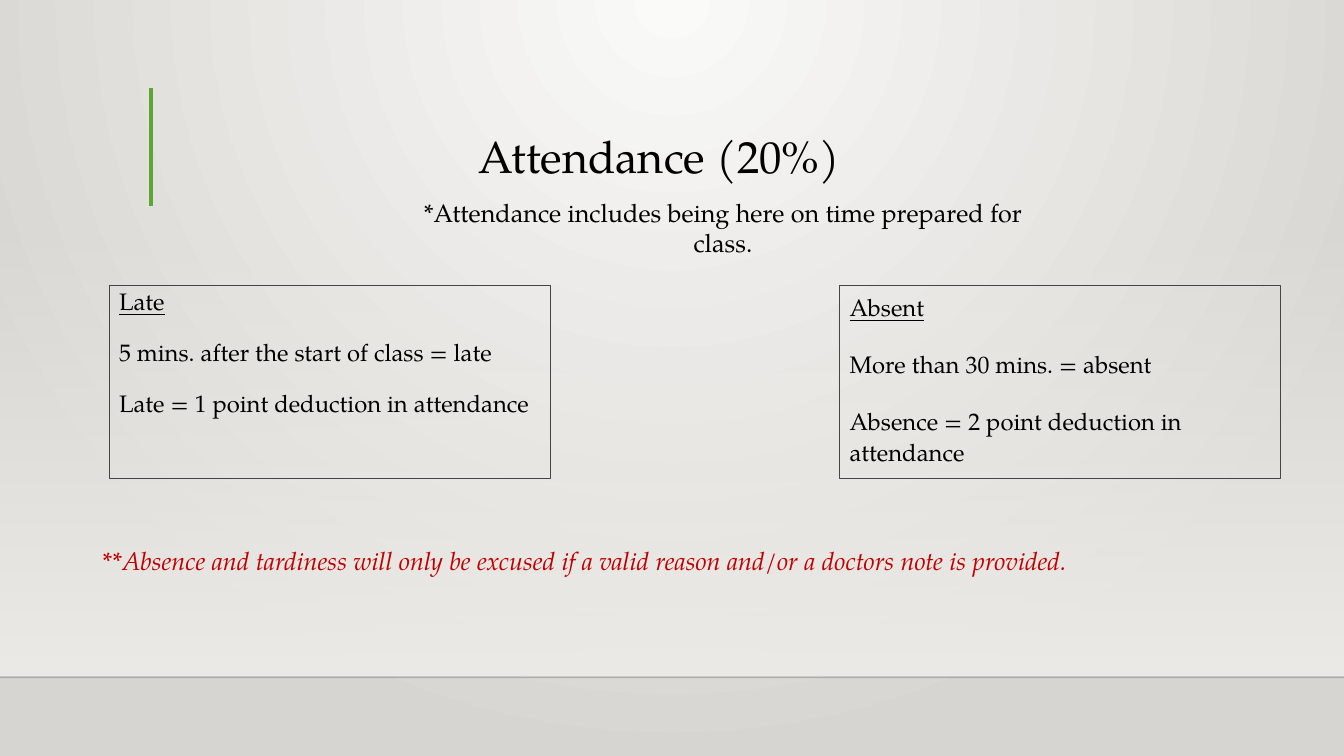
from lxml.etree import SubElement
from pptx import Presentation
from pptx.dml.color import RGBColor
from pptx.enum.shapes import MSO_CONNECTOR as Connector, MSO_SHAPE as Shape
from pptx.enum.text import MSO_ANCHOR as Anchor, MSO_AUTO_SIZE as AutoSize, PP_ALIGN as Align
from pptx.oxml.ns import qn
from pptx.util import Cm, Pt


def color(value):
    return RGBColor.from_string(value)


def write(frame, lines, size, align=Align.LEFT, spacing=1.0, gap=0, ink="000000"):
    frame.word_wrap = True
    frame.text = "\n".join(lines)
    for index, para in enumerate(frame.paragraphs):
        para.alignment = align
        para.line_spacing = spacing
        para.space_before = Pt(gap if index else 0)
        for span in para.runs:
            span.font.name = "TeX Gyre Pagella"
            span.font.size = Pt(size)
            span.font.color.rgb = color(ink)


deck = Presentation()
deck.slide_width, deck.slide_height = Cm(33.87), Cm(19.05)
page = deck.slides.add_slide(deck.slide_layouts[5])

backdrop = page.background.fill
backdrop.gradient()
for stop, (place, tone) in zip(backdrop.gradient_stops, [(0, "FAFAF9"), (1, "D7D5D2")]):
    stop.position = place
    stop.color.rgb = color(tone)
gradient = next(page.element.iter(qn("a:gradFill")))
gradient.remove(gradient.find(qn("a:lin")))
circle = SubElement(gradient, qn("a:path"), path="circle")
SubElement(circle, qn("a:fillToRect"), l="43000", t="0", r="43000", b="100000")

haze = page.shapes.add_shape(Shape.RECTANGLE, Cm(0), Cm(5.59), deck.slide_width, Cm(11.43))
haze.shadow.inherit = False
haze.line.fill.background()
haze.fill.gradient()
haze.fill.gradient_angle = 270
for place, stop in enumerate(haze.fill.gradient_stops):
    stop.position = place
    stop.color.rgb = color("EDEBE7")
SubElement(next(haze.element.iter(qn("a:srgbClr"))), qn("a:alpha"), val="0")

rules = [
    (0, 17.07, 33.87, 17.07, "000001", 1, 20),
    (3.81, 2.21, 3.81, 5.18, "5FA534", 3, 100),
]
for left, top, right, bottom, tone, width, opacity in rules:
    rule = page.shapes.add_connector(Connector.STRAIGHT, Cm(left), Cm(top), Cm(right), Cm(bottom))
    rule.line.color.rgb = color(tone)
    rule.line.width = Pt(width)
    SubElement(next(rule.element.iter(qn("a:srgbClr"))), qn("a:alpha"), val=str(opacity * 1000))
    SubElement(rule.element.spPr, qn("a:effectLst"))

title = page.shapes.title
title.left, title.top, title.width, title.height = Cm(8.97), Cm(1.07), Cm(15.29), Cm(3.68)
write(title.text_frame, ["Attendance (20%)"], 32, Align.CENTER, 0.9)
title.text_frame.auto_size = AutoSize.NONE
title.text_frame.vertical_anchor = Anchor.BOTTOM

policies = [
    (2.75, 0.9, ["Late", "5 mins. after the start of class = late",
                 "Late = 1 point deduction in attendance"]),
    (21.16, 1.1, ["Absent", "More than 30 mins. = absent",
                  "Absence = 2 point deduction in attendance"]),
]
for left, spacing, lines in policies:
    box = page.shapes.add_shape(Shape.RECTANGLE, Cm(left), Cm(7.19), Cm(11.12), Cm(4.88))
    box.shadow.inherit = False
    box.fill.background()
    box.line.color.rgb = color("454545")
    box.line.width = Pt(0.75)
    write(box.text_frame, lines, 17, spacing=spacing, gap=18)
    box.text_frame.vertical_anchor = Anchor.TOP
    box.text_frame.paragraphs[0].runs[0].font.underline = True

subtitle = page.shapes.add_textbox(Cm(9.75), Cm(4.85), Cm(16.94), Cm(1.8))
write(subtitle.text_frame, ["*Attendance includes being here on time prepared for class."], 18, Align.CENTER)

excuse = page.shapes.add_textbox(Cm(2.34), Cm(13.61), Cm(31.53), Cm(1.02))
write(excuse.text_frame, ["**Absence and tardiness will only be excused if a valid reason "
                          "and/or a doctors note is provided."], 18, ink="C00000")
excuse.text_frame.paragraphs[0].runs[0].font.italic = True

deck.save("out.pptx")
